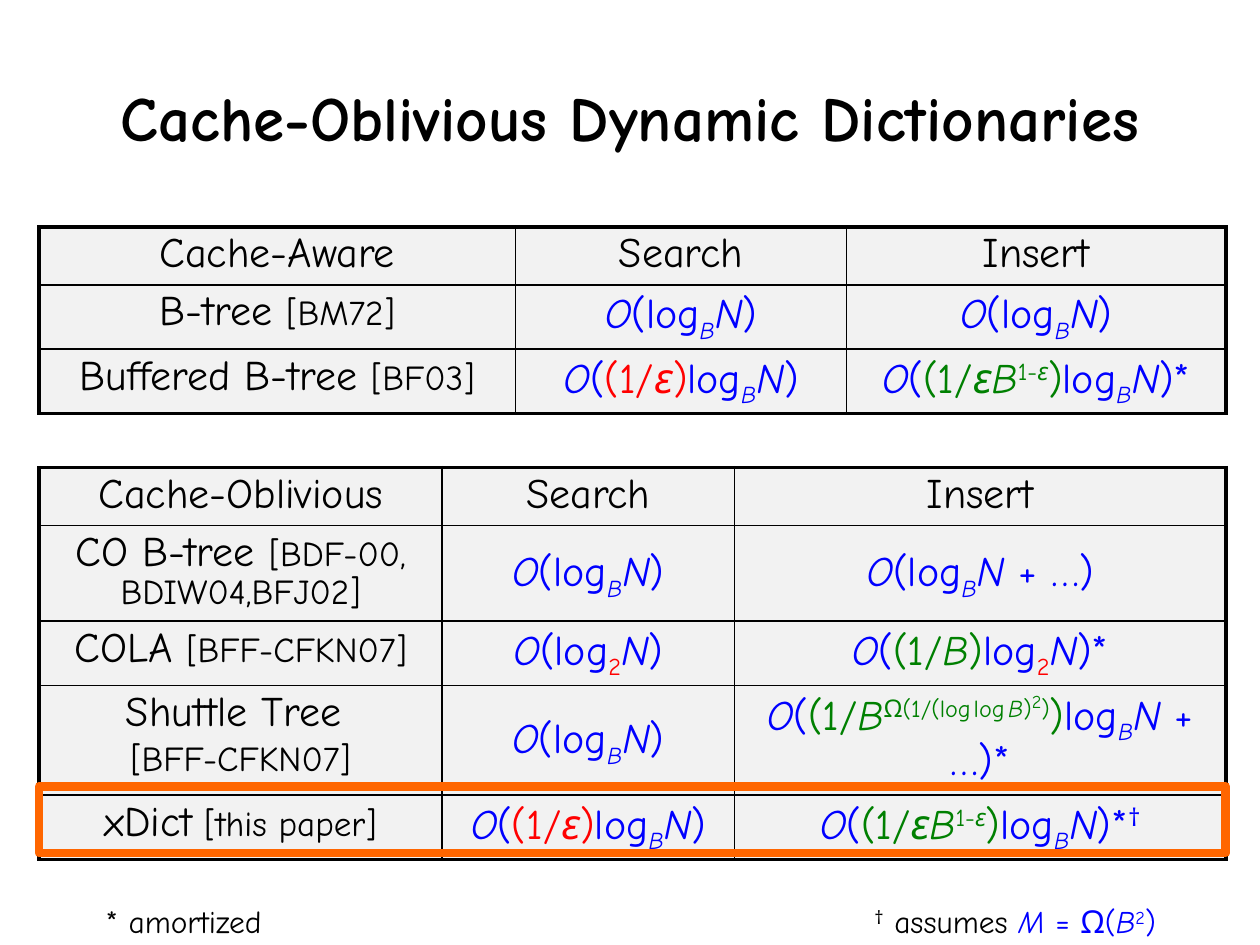
import dataclasses
import typing

import lxml.etree
import pptx
import pptx.dml.color
import pptx.enum.shapes
import pptx.enum.text
import pptx.oxml.ns
import pptx.util

Pt = pptx.util.Pt
qn = pptx.oxml.ns.qn
Hue = pptx.dml.color.RGBColor.from_string
Align = pptx.enum.text.PP_ALIGN
Anchor = pptx.enum.text.MSO_ANCHOR


@dataclasses.dataclass(frozen=True)
class Theme:
    face: str = "Comic Neue"
    ink: str = "000000"
    blue: str = "0000FF"
    red: str = "FF0000"
    green: str = "008001"
    fill: str = "F2F2F2"
    mark: str = "FF6600"
    title: float = 36
    body: float = 24
    cite: float = 20
    note: float = 18
    thick: float = 2.25
    thin: float = 1
    frame: float = 5


@dataclasses.dataclass(frozen=True)
class Run:
    text: str
    hue: str = ""
    slant: bool = False
    base: int = 0
    size: float = 0


@dataclasses.dataclass(frozen=True)
class Cell:
    lines: list[list[Run]]
    hue: str = Theme.ink
    mid: bool = False


@dataclasses.dataclass(frozen=True)
class Grid:
    top: float
    height: float
    cols: list[float]
    rows: list[float]
    cells: list[list[Cell]]
    inset: float = 7.2


theme = Theme()
LEFT, WIDTH = 22.3, 678.2


def label(text: str, cite: str = "", split: bool = False) -> Cell:
    runs = [Run(text)]
    if not cite:
        return Cell([runs])
    ref = Run(cite, size=theme.cite)
    return Cell([runs, [ref]] if split else [runs + [ref]])


def cost(factor: typing.Sequence[Run] = (), sub: Run = Run("B", slant=True, base=-25),
         tail: typing.Sequence[Run] = (Run(")"),), mid: bool = False) -> Cell:
    start = [Run("("), *factor, Run("log")] if factor else [Run("(log")]
    runs = [Run("O", slant=True), *start, sub, Run("N", slant=True), *tail]
    return Cell([runs], theme.blue, mid)


def tint(hue: str, runs: list[Run]) -> list[Run]:
    return [dataclasses.replace(run, hue=hue) for run in runs]


def write(para: typing.Any, runs: list[Run], size: float, hue: str) -> None:
    para.font.name = theme.face
    para.font.size = Pt(size)
    para.font.color.rgb = Hue(hue)
    for part in runs:
        run = para.add_run()
        run.text = part.text
        if part.hue:
            run.font.color.rgb = Hue(part.hue)
        if part.slant:
            run.font.italic = True
        if part.size:
            run.font.size = Pt(part.size)
        if part.base:
            run._r.get_or_add_rPr().set("baseline", str(part.base * 1000))


def space(para: typing.Any) -> None:
    para.alignment = Align.CENTER
    para.line_spacing = 0.9
    para.space_before = Pt(0)
    gap = para._p.pPr.find(qn("a:spcBef"))
    gap.remove(gap[0])
    lxml.etree.SubElement(gap, qn("a:spcPct"), val="20000")


def edge(cell: typing.Any, sides: dict[str, float]) -> None:
    props = cell._tc.get_or_add_tcPr()
    for spot, (side, width) in enumerate(sides.items()):
        line = lxml.etree.Element(qn(f"a:ln{side}"), w=str(Pt(width)))
        fill = lxml.etree.SubElement(line, qn("a:solidFill"))
        lxml.etree.SubElement(fill, qn("a:srgbClr"), val=theme.ink)
        props.insert(spot, line)


def draw(slide: typing.Any, grid: Grid) -> None:
    high, wide = len(grid.rows), len(grid.cols)
    frame = slide.shapes.add_table(high, wide, Pt(LEFT), Pt(grid.top), Pt(WIDTH), Pt(grid.height))
    table = frame.table
    table.first_row = table.horz_banding = False
    for col, width in zip(table.columns, grid.cols):
        col.width = Pt(width)
    for row, height in zip(table.rows, grid.rows):
        row.height = Pt(height)
    frame.height = Pt(grid.height)
    for y, line in enumerate(grid.cells):
        for x, item in enumerate(line):
            cell = table.cell(y, x)
            cell.fill.solid()
            cell.fill.fore_color.rgb = Hue(theme.fill)
            if item.mid:
                cell.vertical_anchor = Anchor.MIDDLE
            if x == 0:
                cell.margin_left = cell.margin_right = Pt(grid.inset)
            outer = {"L": x == 0, "R": x == wide - 1, "T": y == 0, "B": y == high - 1}
            edge(cell, {side: theme.thick if out else theme.thin for side, out in outer.items()})
            text = cell.text_frame
            for spot, runs in enumerate(item.lines):
                para = text.add_paragraph() if spot else text.paragraphs[0]
                space(para)
                write(para, runs, theme.body, item.hue)


def note(slide: typing.Any, left: float, width: float, runs: list[Run]) -> None:
    text = slide.shapes.add_textbox(Pt(left), Pt(511.9), Pt(width), Pt(28.8)).text_frame
    text.word_wrap = False
    text.auto_size = pptx.enum.text.MSO_AUTO_SIZE.SHAPE_TO_FIT_TEXT
    write(text.paragraphs[0], runs, theme.note, theme.ink)


def main() -> None:
    deck = pptx.Presentation()
    deck.slide_width, deck.slide_height = Pt(720), Pt(540)
    slide = deck.slides.add_slide(deck.slide_layouts[6])

    text = slide.shapes.add_textbox(0, Pt(21.6), Pt(720), Pt(90)).text_frame
    text.word_wrap = True
    text.vertical_anchor = Anchor.MIDDLE
    head = text.paragraphs[0]
    head.alignment = Align.CENTER
    head.font.bold = True
    write(head, [Run("Cache-Oblivious Dynamic Dictionaries")], theme.title, theme.ink)

    slow = tint(theme.red, [Run("(1/"), Run("ε", slant=True), Run(")")])
    fast = tint(theme.green, [Run("(1/"), Run("εB", slant=True), Run("1-", base=30),
                              Run("ε", slant=True, base=30), Run(")")])
    block = tint(theme.green, [Run("(1/"), Run("B", slant=True), Run(")")])
    power = tint(theme.green, [
        Run("(1/"), Run("B", slant=True), Run("Ω(1/(log", base=30), Run(" ", base=30, size=8),
        Run("log", base=30), Run(" ", base=30, size=10), Run("B", slant=True, base=30),
        Run(")", base=30), Run("2", base=70, size=18), Run(")", base=30), Run(")")])
    two = Run("2", theme.red, base=-25)
    star = [Run(")*")]
    names = [label("Search"), label("Insert")]

    draw(slide, Grid(129.6, 99.4, [272.2, 189.3, 216.7], [26.6, 26.6, 31.7], [
        [label("Cache-Aware"), *names],
        [label("B-tree ", "[BM72]"), cost(), cost()],
        [label("Buffered B-tree ", "[BF03]"), cost(slow), cost(fast, tail=star)],
    ], inset=0))
    draw(slide, Grid(267.1, 221, [230.4, 167, 280.8], [29.5, 28.1, 36.7, 45.4, 36.7], [
        [label("Cache-Oblivious"), *names],
        [label("CO B-tree ", "[BDF-00, BDIW04,BFJ02]"), cost(mid=True),
         cost(tail=[Run(" + …)")], mid=True)],
        [label("COLA ", "[BFF-CFKN07]"), cost(sub=two), cost(block, two, star)],
        [label("Shuttle Tree ", "[BFF-CFKN07]", split=True), cost(mid=True),
         cost(power, tail=[Run(" + …)*")])],
        [label("xDict", " [this paper]"), cost(slow),
         cost(fast, tail=star + [Run("†", base=30)])],
    ]))

    box = slide.shapes.add_shape(pptx.enum.shapes.MSO_SHAPE.RECTANGLE,
                                 Pt(LEFT), Pt(449.3), Pt(WIDTH), Pt(38.2))
    box.shadow.inherit = False
    box.fill.background()
    box.line.color.rgb = Hue(theme.mark)
    box.line.width = Pt(theme.frame)
    lxml.etree.SubElement(box.line._ln, qn("a:round"))

    note(slide, 53.3, 115.2, [Run("* amortized")])
    note(slide, 492.5, 187.9, [Run("†", base=30), Run(" assumes ")] + tint(theme.blue, [
        Run("M", slant=True), Run(" = Ω("), Run("B", slant=True), Run("2", base=30), Run(")")]))
    deck.save("out.pptx")


if __name__ == "__main__":
    main()
